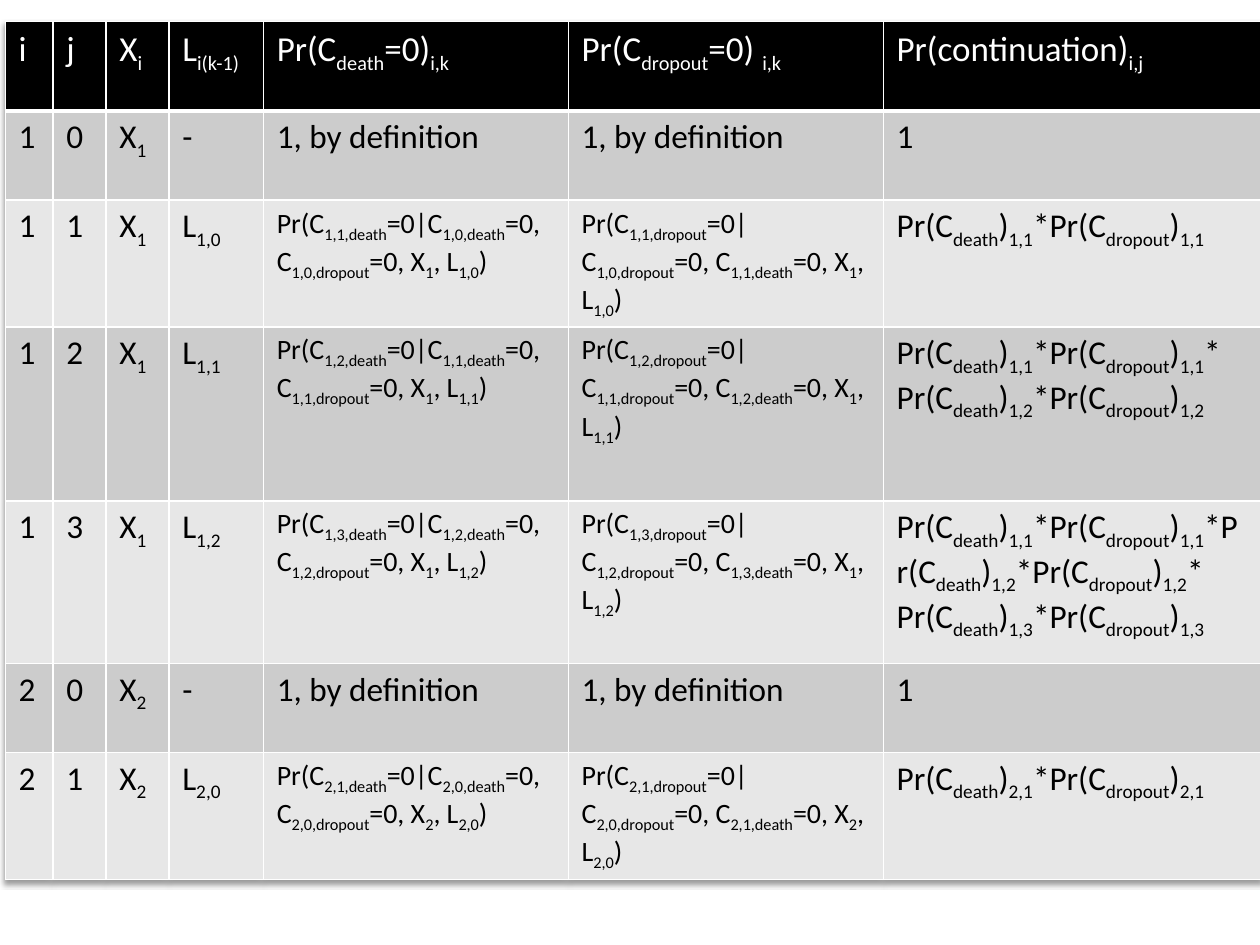
import pptx
import pptx.dml.color
import pptx.oxml
import pptx.oxml.ns
import pptx.util

Pt = pptx.util.Pt
RGB = pptx.dml.color.RGBColor.from_string

THEME = {
    "font": "Calibri",
    "head": {"fill": "000000", "ink": "FFFFFF", "size": 20},
    "bands": ["CCCCCC", "E7E7E7"],
    "ink": "000000",
    "line": "FFFFFF",
    "size": 19,
    "small": 16,
}
COLS = [27.4, 30.2, 36, 54, 174.2, 180, 216]
ROWS = [51, 51, 53.3, 99.4, 92.9, 51, 53.3]
STEPS = [(1, 0), (1, 1), (1, 2), (1, 3), (2, 0), (2, 1)]
# Square brackets mark subscripts
HEADS = ["i", "j", "X[i]", "L[i(k-1)]", "Pr(C[death]=0)[i,k]",
         "Pr(C[dropout]=0) [i,k]", "Pr(continuation)[i,j]"]
NS = pptx.oxml.ns.nsdecls("a")


# Wording of one body row
def chain(i, j):
    parts = [f"Pr(C[death])[{i},{n}]*Pr(C[dropout])[{i},{n}]"
             for n in range(1, j + 1)]
    last = parts.pop()
    return "*".join(parts) + "*\n" + last if parts else last


def words(i, j):
    start = [str(i), str(j), f"X[{i}]"]
    if j == 0:
        return start + ["-", "1, by definition", "1, by definition", "1"]
    now, past = f"{i},{j}", f"{i},{j - 1}"
    given = f"X[{i}], L[{past}])"
    death = (f"Pr(C[{now},death]=0|C[{past},death]=0, "
             f"C[{past},dropout]=0, {given}")
    drop = (f"Pr(C[{now},dropout]=0|C[{past},dropout]=0, "
            f"C[{now},death]=0, {given}")
    return start + [f"L[{past}]", death, drop, chain(i, j)]


# Text with subscripts
def write(frame, text, size, ink):
    looks = {"name": THEME["font"], "size": Pt(size), "bold": False}
    for n, line in enumerate(text.split("\n")):
        para = frame.add_paragraph() if n else frame.paragraphs[0]
        for k, piece in enumerate(line.replace("]", "[").split("[")):
            if not piece:
                continue
            run = para.add_run()
            run.text = piece
            for key, value in looks.items():
                setattr(run.font, key, value)
            run.font.color.rgb = RGB(ink)
            if k % 2:
                run._r.get_or_add_rPr().set("baseline", "-25000")


# Cell borders, fill and margins
def dress(cell, fill, top, base):
    props = cell._tc.get_or_add_tcPr()
    for side, width in zip("LRTB", (1, 1, top, base)):
        props.append(pptx.oxml.parse_xml(
            f'<a:ln{side} {NS} w="{Pt(width)}"><a:solidFill>'
            f'<a:srgbClr val="{THEME["line"]}"/></a:solidFill></a:ln{side}>'))
    cell.fill.solid()
    cell.fill.fore_color.rgb = RGB(fill)
    edges = {"margin_left": 7.6, "margin_right": 7.6,
             "margin_top": 3.6, "margin_bottom": 3.6}
    for key, value in edges.items():
        setattr(cell, key, Pt(value))


def shade(table):
    table._tbl.tblPr.insert(0, pptx.oxml.parse_xml(
        f'<a:effectLst {NS}><a:outerShdw blurRad="{Pt(3)}" dist="{Pt(2)}" '
        'dir="5400000" rotWithShape="0"><a:srgbClr val="000000">'
        '<a:alpha val="40000"/></a:srgbClr></a:outerShdw></a:effectLst>'))


def grid(slide):
    table = slide.shapes.add_table(
        len(ROWS), len(COLS), Pt(3), Pt(12.4),
        Pt(sum(COLS)), Pt(sum(ROWS))).table
    table.first_row = table.horz_banding = False
    for col, width in zip(table.columns, COLS):
        col.width = Pt(width)
    for row, height in zip(table.rows, ROWS):
        row.height = Pt(height)
    shade(table)
    return table


def main():
    deck = pptx.Presentation()
    deck.slide_width, deck.slide_height = Pt(720), Pt(540)
    slide = deck.slides.add_slide(deck.slide_layouts[6])
    table = grid(slide)

    # Header row
    head = THEME["head"]
    for c, text in enumerate(HEADS):
        cell = table.cell(0, c)
        dress(cell, head["fill"], 1, 3)
        write(cell.text_frame, text, head["size"], head["ink"])

    # Body rows
    for r, (i, j) in enumerate(STEPS, 1):
        for c, text in enumerate(words(i, j)):
            cell = table.cell(r, c)
            dress(cell, THEME["bands"][(r - 1) % 2], 3 if r == 1 else 1, 1)
            size = THEME["small" if j and c in (4, 5) else "size"]
            write(cell.text_frame, text, size, THEME["ink"])

    deck.save("out.pptx")


if __name__ == "__main__":
    main()
